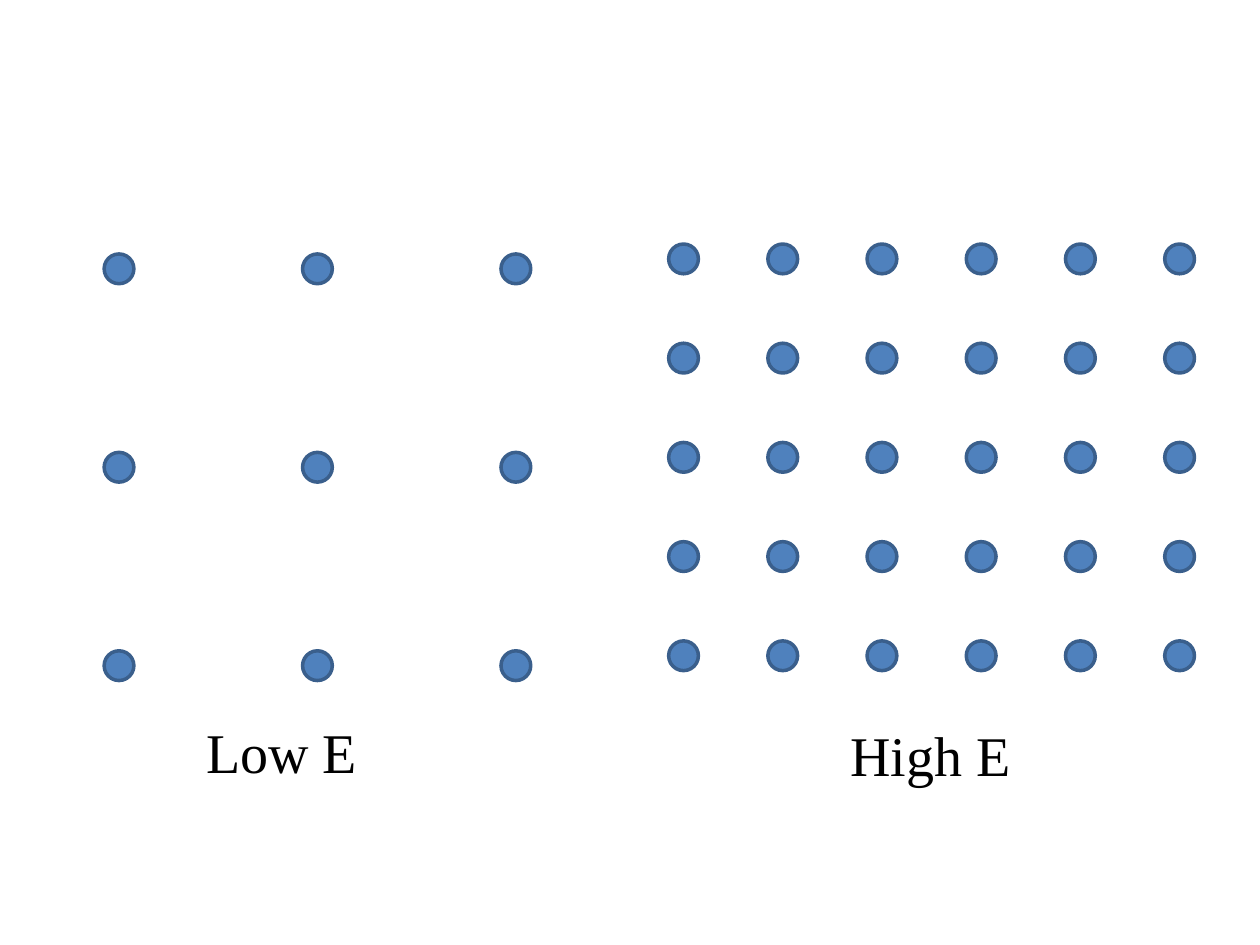
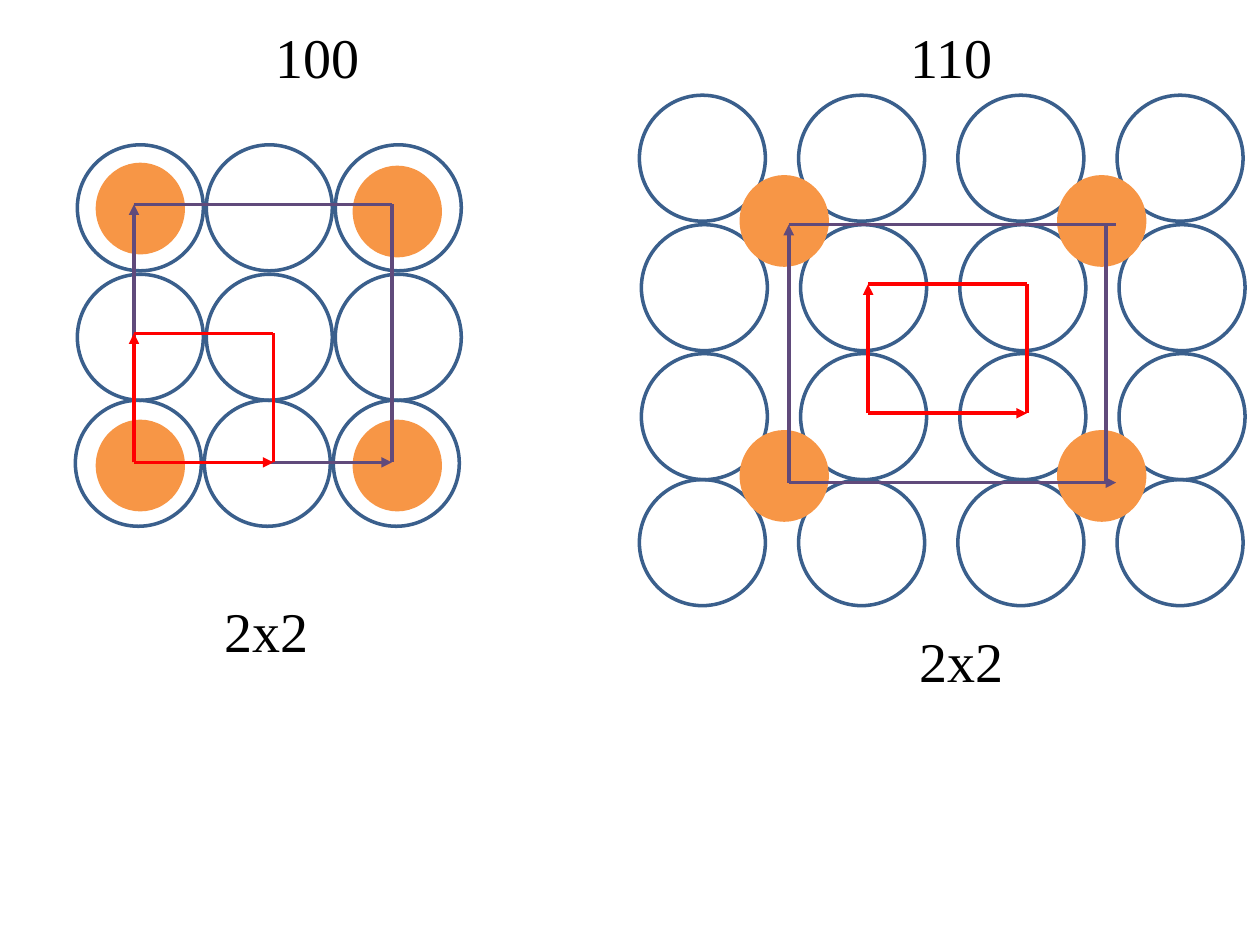
from dataclasses import dataclass
from itertools import product

from lxml.etree import SubElement
from pptx import Presentation
from pptx.dml.color import RGBColor
from pptx.enum.shapes import MSO_CONNECTOR as Connector, MSO_SHAPE as Shape
from pptx.enum.text import MSO_AUTO_SIZE as AutoSize
from pptx.oxml.ns import qn
from pptx.util import Cm, Pt

FONT = "Times New Roman"
BLACK = "000000"
DOT_FILL = "4F81BD"
OUTLINE = "3A5F8C"
ADSORBATE_FILL = "F79646"
SUPERCELL_COLOR = "604A7B"
PRIMITIVE_COLOR = "FF0000"

DOT = 0.6
ATOM = 2.54
ADSORBATE = (1.8, 1.85)
LABEL_HEIGHT = 1.62
CODE_WIDTH = 2.24
STROKE = Pt(2)


def rgb(value):
    return RGBColor.from_string(value)


def add_label(slide, left, top, width, text):
    box = slide.shapes.add_textbox(Cm(left), Cm(top), Cm(width), Cm(LABEL_HEIGHT))
    frame = box.text_frame
    frame.text = text
    frame.word_wrap = False
    frame.auto_size = AutoSize.SHAPE_TO_FIT_TEXT
    font = frame.paragraphs[0].runs[0].font
    font.name, font.size = FONT, Pt(32)
    font.color.rgb = rgb(BLACK)


def add_circle(slide, left, top, width, height, fill=None, line=None):
    circle = slide.shapes.add_shape(
        Shape.OVAL, Cm(left), Cm(top), Cm(width), Cm(height))
    circle.shadow.inherit = False
    if fill:
        circle.fill.solid()
        circle.fill.fore_color.rgb = rgb(fill)
    else:
        circle.fill.background()
    if line:
        circle.line.color.rgb = rgb(line)
        circle.line.width = STROKE
    else:
        circle.line.fill.background()


def add_edge(slide, start, end, color, arrow=False):
    edge = slide.shapes.add_connector(
        Connector.STRAIGHT, *(Cm(value) for value in (*start, *end)))
    edge.line.color.rgb = rgb(color)
    edge.line.width = STROKE
    if arrow:
        SubElement(edge.line._get_or_add_ln(), qn("a:tailEnd"), type="triangle")
    SubElement(edge._element.spPr, qn("a:effectLst"))


def add_dot_lattice(slide, left, top, columns, rows, pitch):
    for row, column in product(range(rows), range(columns)):
        add_circle(slide, left + column * pitch, top + row * pitch,
                   DOT, DOT, DOT_FILL, OUTLINE)


def add_unit_cell(slide, left, bottom, width, height, color, overshoot=0):
    """Two lattice vectors from the lower left corner, closed by two plain edges.

    The horizontal edges run past the right one by overshoot.
    """
    right, top = left + width, bottom - height
    origin, far = (left, bottom), right + overshoot
    add_edge(slide, origin, (far, bottom), color, arrow=True)
    add_edge(slide, origin, (left, top), color, arrow=True)
    add_edge(slide, (left, top), (far, top), color)
    add_edge(slide, (right, bottom), (right, top), color)


@dataclass
class Surface:
    """A crystal face; all places are in cm from the top left of its box."""
    miller: str
    miller_at: tuple
    order_at: tuple
    columns: int
    pitch: float
    rows: list          # (shift right, distance down) of each row of atoms
    adsorbates: list
    supercell: tuple    # left, bottom, width, height[, overshoot]
    primitive: tuple


FACE_100 = Surface(
    miller="100", miller_at=(3.75, -2.59), order_at=(2.71, 8.99),
    columns=3, pitch=2.6, rows=[(0, 0), (0, 2.61), (-0.04, 5.15)],
    adsorbates=[(0.37, 0.36), (5.55, 0.42), (0.37, 5.54), (5.55, 5.54)],
    supercell=(1.14, 6.4, 5.2, 5.2), primitive=(1.14, 6.4, 2.81, 2.6))

FACE_110 = Surface(
    miller="110", miller_at=(5.18, -1.59), order_at=(5.36, 10.58),
    columns=4, pitch=3.21,
    rows=[(-0.04, 0), (0, 2.61), (0, 5.21), (-0.04, 7.75)],
    adsorbates=list(product((1.98, 8.38), (1.61, 6.75))),
    supercell=(2.97, 7.81, 6.4, 5.2, 0.2), primitive=(4.57, 6.41, 3.2, 2.6))


def add_surface(slide, left, top, face):
    for (shift, down), column in product(face.rows, range(face.columns)):
        add_circle(slide, left + shift + column * face.pitch, top + down,
                   ATOM, ATOM, line=OUTLINE)
    for x, y in face.adsorbates:
        add_circle(slide, left + x, top + y, *ADSORBATE, fill=ADSORBATE_FILL)
    for cell, color in ((face.supercell, SUPERCELL_COLOR),
                        (face.primitive, PRIMITIVE_COLOR)):
        x, bottom, width, height, *overshoot = cell
        add_unit_cell(slide, left + x, top + bottom, width, height, color, *overshoot)
    for text, (x, y) in ((face.miller, face.miller_at), ("2x2", face.order_at)):
        add_label(slide, left + x, top + y, CODE_WIDTH, text)


def build_energy_slide(slide):
    add_dot_lattice(slide, 2.1, 5.12, columns=3, rows=3, pitch=4)
    add_label(slide, 3.91, 14.33, 3.58, "Low E")
    add_dot_lattice(slide, 13.48, 4.92, columns=6, rows=5, pitch=2)
    add_label(slide, 16.89, 14.4, 3.78, "High E")


def build_surface_slide(slide):
    add_surface(slide, 1.56, 2.92, FACE_100)
    add_surface(slide, 12.93, 1.92, FACE_110)


def main():
    deck = Presentation()
    deck.slide_width, deck.slide_height = Cm(25.4), Cm(19.05)
    blank = deck.slide_layouts[6]
    for build in (build_energy_slide, build_surface_slide):
        build(deck.slides.add_slide(blank))
    deck.save("out.pptx")


if __name__ == "__main__":
    main()
